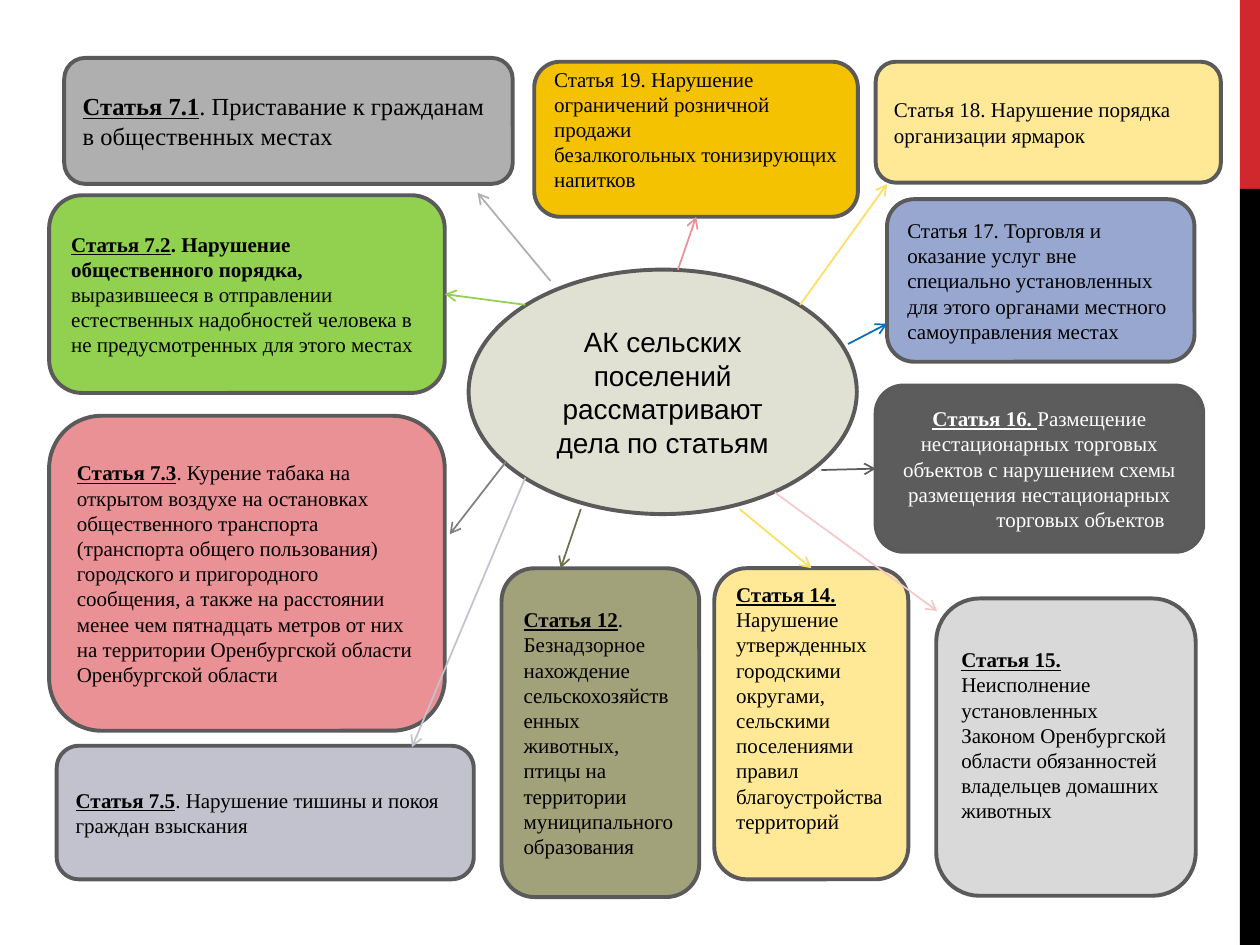
import pptx
import pptx.util
import pptx.dml.color
import pptx.enum.shapes
import pptx.enum.text
from lxml import etree
from pptx.oxml.ns import qn

Pt = pptx.util.Pt
RGB = pptx.dml.color.RGBColor
SHAPE = pptx.enum.shapes.MSO_SHAPE
ALIGN = pptx.enum.text.PP_ALIGN

BLACK, WHITE = RGB(0, 0, 0), RGB(255, 255, 255)
RED = RGB(0xD1, 0x28, 0x2E)
EDGE = RGB(0x5A, 0x5A, 0x5A)
STONE = RGB(0xE1, 0xE1, 0xD3)
CREAM = RGB(0xFF, 0xE9, 0x96)
GREEN = RGB(0x92, 0xD0, 0x50)
SILVER = RGB(0xAF, 0xAF, 0xAF)
ROSE = RGB(0xEA, 0x91, 0x95)
GOLD = RGB(0xF5, 0xC2, 0x01)
PALE = RGB(0xD9, 0xD9, 0xD9)
OLIVE = RGB(0xA1, 0xA1, 0x7A)
LILAC = RGB(0xC1, 0xC2, 0xCD)
BLUE = RGB(0x97, 0xA7, 0xD0)
DARK = RGB(0x5C, 0x5C, 0x5C)
GREY = RGB(0x80, 0x80, 0x80)
MOSS = RGB(0x6F, 0x6F, 0x4E)
LEMON = RGB(0xFE, 0xDE, 0x61)
BLUSH = RGB(0xF5, 0xC8, 0xCA)
AZURE = RGB(0x00, 0x70, 0xC0)

SERIF = "Times New Roman"
HEAD, BOLD, BODY = (True, True), (True, False), (False, False)  # bold, underline

HUB = "АК сельских поселений рассматривают дела по статьям"

# Article: place, fill, paragraphs of (text, style) runs
CARDS = {
    "18": ((500.4, 35.3, 197.3, 69.1), CREAM, [
        [("Статья 18. Нарушение порядка организации ярмарок", BODY)]]),
    "7.2": ((28.1, 111.6, 226.1, 113), GREEN, [
        [("Статья 7.2", HEAD), (". Нарушение общественного порядка, ", BOLD),
         ("выразившееся в отправлении естественных надобностей человека "
          "в не предусмотренных для этого местах", BODY)]]),
    "7.1": ((36.7, 33.1, 256.3, 72), SILVER, [
        [("Статья 7.1", HEAD),
         (". Приставание к гражданам в общественных местах", BODY)]]),
    "7.3": ((28.1, 237.6, 226.1, 180), ROSE, [
        [("Статья 7.3", HEAD),
         (". Курение табака на открытом воздухе на остановках общественного "
          "транспорта (транспорта общего пользования) городского и "
          "пригородного", BODY)],
        [("сообщения, а также на расстоянии менее чем пятнадцать метров от них "
          "на территории Оренбургской области Оренбургской области", BODY)]]),
    "19": ((305.3, 35.3, 185, 88.6), GOLD, [
        [("Статья 19. Нарушение ограничений розничной продажи", BODY)],
        [("безалкогольных тонизирующих напитков", BODY)]]),
    "15": ((535, 342, 148.3, 169.9), PALE, [
        [("Статья 15. ", HEAD),
         ("Неисполнение установленных Законом Оренбургской области "
          "обязанностей владельцев домашних животных", BODY)]]),
    "14": ((408.2, 324.7, 110.9, 177.8), CREAM, [
        [("Статья 14. ", HEAD),
         ("Нарушение утвержденных городскими округами, сельскими поселениями "
          "правил благоустройства территорий", BODY)]]),
    "12": ((286.6, 324.7, 113, 187.9), OLIVE, [
        [("Статья 12", HEAD),
         (". Безнадзорное нахождение сельскохозяйственных животных, птицы "
          "на территории муниципального образования", BODY)]]),
    "7.5": ((32.4, 426.2, 238.3, 76.3), LILAC, [
        [("Статья 7.5", HEAD),
         (". Нарушение тишины и покоя граждан взыскания", BODY)]]),
    "17": ((506.9, 113.8, 175.7, 92.9), BLUE, [
        [("Статья 17. Торговля и оказание услуг вне специально установленных "
          "для этого органами местного самоуправления местах", BODY)]]),
    "16": ((500.4, 220.3, 187.2, 95), DARK, [
        [("Статья 16. ", HEAD),
         ("Размещение нестационарных торговых объектов с нарушением схемы "
          "размещения нестационарных", BODY)],
        [("торговых объектов", BODY)]]),
}
LIFT = {"19": 11.5, "15": 13.8, "14": 18.4}  # extra room under the text

# Start, end, colour, joined card and side
ARROWS = [
    ((314.6, 160.6), (272.9, 110.2), SILVER, None),
    ((300.2, 174.2), (254.2, 168.1), GREEN, ("7.2", 3)),
    ((289.4, 263.5), (257, 305.3), GREY, None),
    ((300.2, 272.9), (235.4, 427), LILAC, None),
    ((331.9, 290.9), (320.4, 324.7), MOSS, None),
    ((422.6, 290.9), (463.7, 324.7), LEMON, ("14", 0)),
    ((442.8, 281.5), (535.7, 349.2), BLUSH, None),
    ((469.4, 268.6), (500.4, 267.8), DARK, ("16", 1)),
    ((484.6, 196.6), (506.9, 185), AZURE, None),
    ((457.2, 174.2), (506.9, 105.1), LEMON, None),
    ((387.4, 154.1), (397.8, 123.9), RED and ROSE, ("19", 2)),
]

deck = pptx.Presentation()
deck.slide_width, deck.slide_height = Pt(720), Pt(540)
page = deck.slides.add_slide(deck.slide_layouts[6])


def block(kind, place, fill, edge=None):
    part = page.shapes.add_shape(kind, *map(Pt, place))
    part.shadow.inherit = False
    part.fill.solid()
    part.fill.fore_color.rgb = fill
    if edge is None:
        part.line.fill.background()
    else:
        part.line.color.rgb = edge
        part.line.width = Pt(2.25)
    return part


def write(part, paras, face, size, color, align):
    frame = part.text_frame
    frame.word_wrap = True
    frame.vertical_anchor = pptx.enum.text.MSO_ANCHOR.MIDDLE
    for i, runs in enumerate(paras):
        para = frame.add_paragraph() if i else frame.paragraphs[0]
        para.alignment = align
        para.font.name, para.font.size = face, Pt(size)
        para.font.color.rgb = color
        for text, (bold, under) in runs:
            run = para.add_run()
            run.text = text
            run.font.bold, run.font.underline = bold, under
    return frame


# Side bars
block(SHAPE.RECTANGLE, (708.5, 0, 11.5, 108), RED)
block(SHAPE.RECTANGLE, (708.5, 108, 11.5, 432), BLACK)

# Hub
hub = block(SHAPE.OVAL, (267.8, 154.1, 221.8, 139.7), STONE, EDGE)
write(hub, [[(HUB, BODY)]], "Arial", 16, BLACK, ALIGN.CENTER)

# Article cards
cards = {}
for key, (place, fill, paras) in CARDS.items():
    card = cards[key] = block(SHAPE.ROUNDED_RECTANGLE, place, fill, EDGE)
    dark = fill == DARK
    frame = write(card, paras, SERIF, 14 if key == "7.1" else 12,
                  WHITE if dark else BLACK, ALIGN.CENTER if dark else ALIGN.LEFT)
    frame.margin_bottom = Pt(3.6 + LIFT.get(key, 0))
    if dark:  # last line sits right of centre
        frame.paragraphs[-1]._p.get_or_add_pPr().set("marL", str(Pt(47)))

# Arrows
for start, end, color, join in ARROWS:
    arrow = page.shapes.add_connector(
        pptx.enum.shapes.MSO_CONNECTOR.STRAIGHT, *map(Pt, start + end))
    if join:
        arrow.end_connect(cards[join[0]], join[1])
    arrow.line.color.rgb = color
    arrow.line.width = Pt(1)
    etree.SubElement(arrow.line._get_or_add_ln(), qn("a:tailEnd"), type="arrow")
    etree.SubElement(arrow._element.spPr, qn("a:effectLst"))

deck.save("out.pptx")
